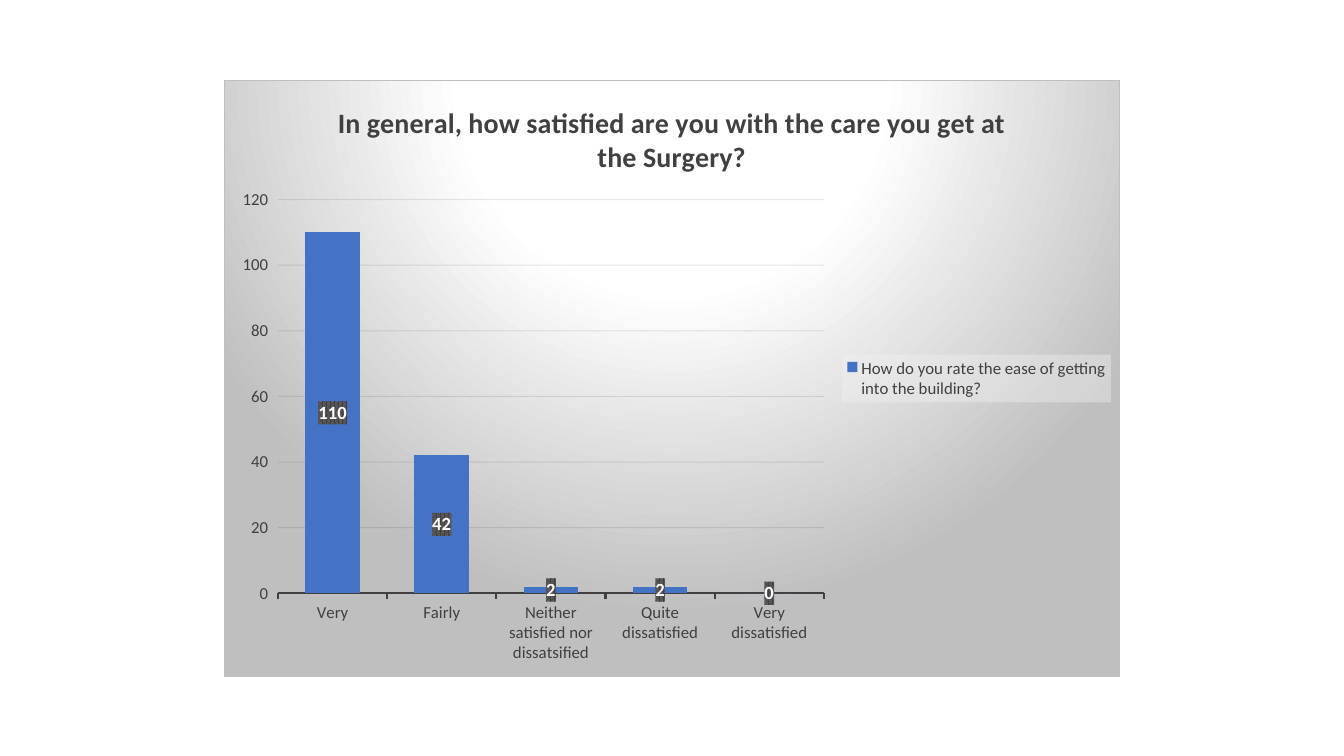
from lxml.etree import SubElement
from pptx import Presentation
from pptx.chart.data import CategoryChartData
from pptx.dml.color import RGBColor as RGB
from pptx.enum.chart import XL_CHART_TYPE as CT, XL_LABEL_POSITION as LP
from pptx.enum.chart import XL_LEGEND_POSITION as LG, XL_TICK_MARK as TM
from pptx.oxml import parse_xml
from pptx.oxml.ns import nsdecls, qn
from pptx.util import Cm, Pt

TITLE = "In general, how satisfied are you with the care you get at the Surgery?"
SERIES = "How do you rate the ease of getting into the building?"
ANSWERS = {
    "Very": 110,
    "Fairly": 42,
    "Neither satisfied nor dissatsified": 2,
    "Quite dissatisfied": 2,
    "Very dissatisfied": 0,
}
CHART_BOX = (5.64, 2.01, 22.58, 15.06)
PLOT_BOX = {"x": 0.06, "y": 0.2, "w": 0.61, "h": 0.66}
THEME = {
    "font": "Calibri", "text": "404040", "bar": "4472C4", "light": "FFFFFF",
    "grid": "0D0D0D", "edge": "BFBFBF", "legend": "F2F2F2", "label": "595959",
    "title_size": 20, "text_size": 12, "label_size": 13.3,
    "thin": 0.75, "axis": 1.5,
}


def set_font(font, size, color, bold=False):
    values = {"name": THEME["font"], "size": Pt(size), "bold": bold}
    for key, value in values.items():
        setattr(font, key, value)
    font.color.rgb = RGB.from_string(color)


def set_line(line, color, width):
    line.color.rgb = RGB.from_string(color)
    line.width = Pt(width)


def clr(name, inner=""):
    return f'<a:srgbClr val="{THEME[name]}">{inner}</a:srgbClr>'


def shape_props(body):
    return parse_xml(f'<c:spPr {nsdecls("c", "a")}>{body}</c:spPr>')


def style_background(space):
    """Circular gradient and thin border behind the whole chart."""
    stops = "".join(f'<a:gs pos="{pos * 1000}">{clr(name)}</a:gs>'
                    for pos, name in ((0, "light"), (39, "light"), (100, "edge")))
    space.find(qn("c:chart")).addnext(shape_props(
        f'<a:gradFill><a:gsLst>{stops}</a:gsLst><a:path path="circle">'
        '<a:fillToRect l="50000" t="-80000" r="50000" b="180000"/></a:path></a:gradFill>'
        f'<a:ln w="{Pt(THEME["thin"])}"><a:solidFill>{clr("edge")}</a:solidFill></a:ln>'))


def place_plot(space):
    """Fix the inner plot area as fractions of the chart."""
    area = space.find(".//" + qn("c:plotArea"))
    for old in area.findall(qn("c:layout")):
        area.remove(old)
    tags = [("layoutTarget", "inner"), ("xMode", "edge"), ("yMode", "edge"), *PLOT_BOX.items()]
    items = "".join(f'<c:{tag} val="{val}"/>' for tag, val in tags)
    area.insert(0, parse_xml(f'<c:layout {nsdecls("c")}><c:manualLayout>{items}'
                             '</c:manualLayout></c:layout>'))


def main():
    prs = Presentation()
    prs.slide_width, prs.slide_height = Cm(33.87), Cm(19.05)
    s = prs.slides.add_slide(prs.slide_layouts[6])

    data = CategoryChartData()
    data.categories = list(ANSWERS)
    data.add_series(SERIES, list(ANSWERS.values()))
    chart = s.shapes.add_chart(CT.COLUMN_CLUSTERED, *map(Cm, CHART_BOX), data).chart
    space = chart.element
    text, size = THEME["text"], THEME["text_size"]
    set_font(chart.font, size, text)

    chart.has_title = True
    tf = chart.chart_title.text_frame
    tf.text = TITLE
    set_font(tf.paragraphs[0].runs[0].font, THEME["title_size"], text, True)
    chart.chart_title.include_in_layout = False

    chart.has_legend = True
    chart.legend.position = LG.RIGHT
    chart.legend.include_in_layout = False
    set_font(chart.legend.font, size, text)

    cat, val = chart.category_axis, chart.value_axis
    for axis in (cat, val):
        axis.major_tick_mark = TM.OUTSIDE
        set_font(axis.tick_labels.font, size, text)
    set_line(cat.format.line, text, THEME["axis"])
    val.format.line.fill.background()
    val.minimum_scale, val.maximum_scale, val.major_unit = 0, 120, 20
    set_line(val.major_gridlines.format.line, THEME["grid"], THEME["thin"])
    grid = space.find(".//" + qn("c:majorGridlines") + "//" + qn("a:srgbClr"))
    SubElement(grid, qn("a:alpha"), val="10000")

    plot = chart.plots[0]
    plot.gap_width = 100
    plot.vary_by_categories = False
    bars = plot.series[0]
    bars.format.fill.solid()
    bars.format.fill.fore_color.rgb = RGB.from_string(THEME["bar"])
    labels = bars.data_labels
    labels.show_value = True
    labels.position = LP.CENTER
    set_font(labels.font, THEME["label_size"], THEME["light"], True)

    boxes = {
        "c:dLbls": f'<a:pattFill prst="pct75"><a:fgClr>{clr("text")}</a:fgClr>'
                   f'<a:bgClr>{clr("label")}</a:bgClr></a:pattFill>',
        "c:legend": "<a:solidFill>" + clr("legend", '<a:alpha val="39000"/>') + "</a:solidFill>",
    }
    for tag, fill in boxes.items():
        space.find(".//" + qn(tag)).find(qn("c:txPr")).addprevious(shape_props(fill))
    style_background(space)
    place_plot(space)
    prs.save("out.pptx")


if __name__ == "__main__":
    main()
